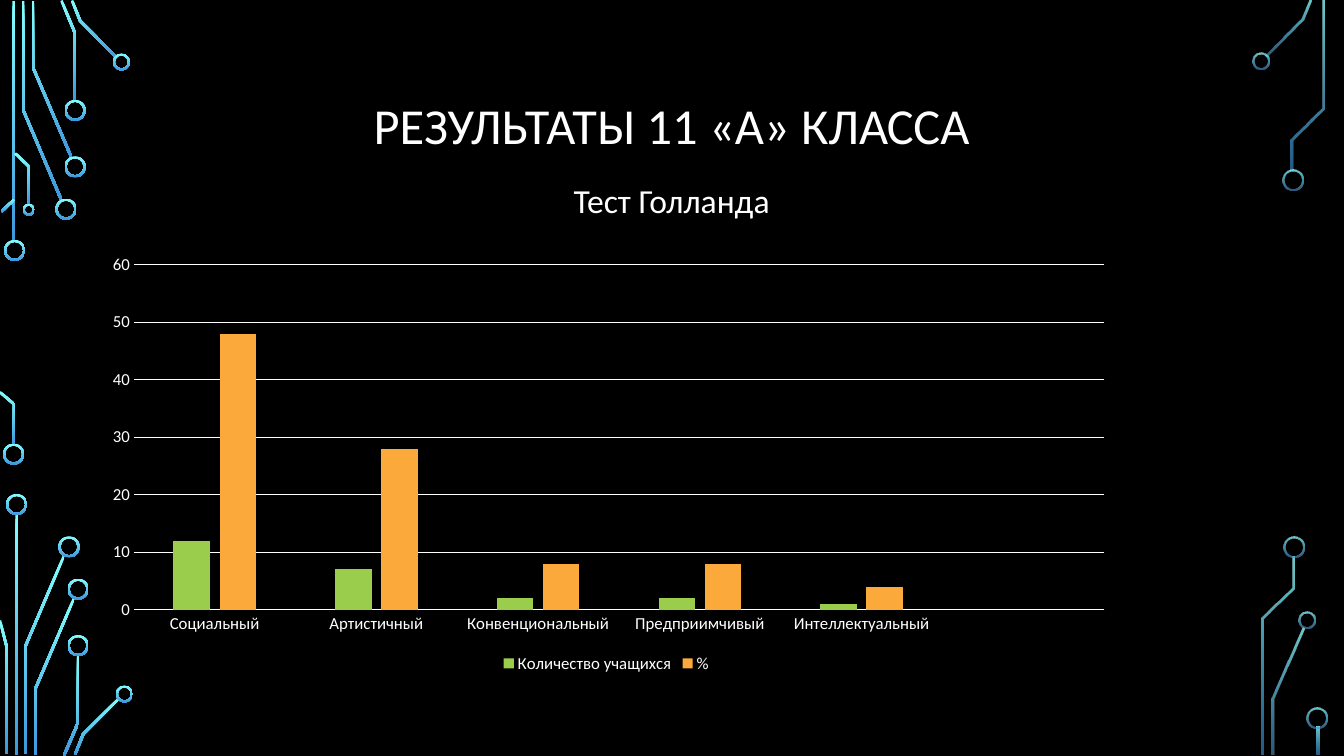
from dataclasses import dataclass
from math import hypot

from pptx import Presentation
from pptx.chart.data import CategoryChartData
from pptx.dml.color import RGBColor
from pptx.enum.chart import XL_CHART_TYPE as ChartType
from pptx.enum.chart import XL_LEGEND_POSITION as LegendPosition
from pptx.enum.chart import XL_TICK_MARK as TickMark
from pptx.enum.shapes import MSO_SHAPE as Preset
from pptx.enum.text import MSO_ANCHOR as Anchor
from pptx.enum.text import PP_ALIGN as Align
from pptx.oxml import parse_xml
from pptx.oxml.ns import nsdecls, qn
from pptx.util import Emu, Pt

PX = 4572  # EMU in one px, 200 px to the inch
SLIDE_WIDTH, SLIDE_HEIGHT = 2667, 1500
TRACE_WIDTH = 5
RING_WIDTH = 4
RING_SIZE = 42


@dataclass(frozen=True)
class Theme:
    font: str = "Calibri"
    background: RGBColor = RGBColor(0x00, 0x00, 0x00)
    text: RGBColor = RGBColor(0xFF, 0xFF, 0xFF)
    glow: tuple = (RGBColor(0x82, 0xFF, 0xFF), RGBColor(0x3D, 0x97, 0xDE))
    series: tuple = (RGBColor(0x9A, 0xCD, 0x4C), RGBColor(0xFA, 0xA9, 0x3A))
    title_size: int = 36
    caption_size: int = 24
    chart_size: int = 12
    rule_width: float = 0.75


THEME = Theme()

# Circuit parts: traces are centre lines, rings are left, top and optional size
LEFT_TRACES = [
    [(27, 2), (27, 480)],
    [(46, 2), (46, 218), (122, 397)],
    [(65, 2), (65, 133), (142, 313)],
    [(122, 1), (149, 66), (149, 200)],
    [(143, 1), (159, 41), (231, 114)],
    [(3, 420), (28, 396)],
    [(0, 778), (28, 802), (28, 882)],
    [(30, 304), (58, 331), (58, 406)],
    [(33, 1020), (33, 1498)],
    [(51, 1496), (51, 1281), (127, 1103)],
    [(13, 1496), (13, 1282), (0, 1231)],
    [(71, 1498), (71, 1365), (147, 1187)],
    [(127, 1499), (155, 1434), (155, 1300)],
    [(149, 1497), (165, 1457), (236, 1386)],
]
LEFT_RINGS = [
    (8, 476), (6, 880), (110, 394), (128, 310), (128, 198), (224, 106, 34),
    (45, 404, 24), (12, 980), (116, 1064), (134, 1148), (134, 1260),
    (230, 1360, 34),
]
RIGHT_TRACES = [
    [(34, 111), (105, 39), (121, 1)],
    [(45, 1498), (45, 1387), (106, 1247)],
    [(145, 2), (145, 215), (84, 277), (84, 338)],
    [(25, 1498), (25, 1227), (87, 1167), (87, 1104)],
    [(135, 1442), (135, 1498)],
]
RIGHT_RINGS = [(6, 104, 34), (64, 336), (96, 1214, 34), (66, 1064), (112, 1404)]

CATEGORIES = ["Социальный", "Артистичный", "Конвенциональный",
              "Предприимчивый", "Интеллектуальный", ""]
SERIES = {
    "Количество учащихся": (12, 7, 2, 2, 1, None),
    "%": (48, 28, 8, 8, 4, None),
}


def to_emu(*lengths):
    return [Emu(round(length * PX)) for length in lengths]


def trace_outline(points, width):
    """Return the closed outline of a mitred band along the points."""
    normals = []
    for (x1, y1), (x2, y2) in zip(points, points[1:]):
        length = hypot(x2 - x1, y2 - y1)
        normals.append(((y1 - y2) / length, (x2 - x1) / length))
    before, after = normals[:1] + normals, normals + normals[-1:]
    near, far = [], []
    for (x, y), (ax, ay), (bx, by) in zip(points, before, after):
        reach = width / 2 / (1 + ax * bx + ay * by)
        dx, dy = (ax + bx) * reach, (ay + by) * reach
        near.append((x + dx, y + dy))
        far.append((x - dx, y - dy))
    return near + far[::-1]


def paint_glow(shape, opacities):
    shape.shadow.inherit = False
    shape.line.fill.background()
    shape.fill.gradient()
    shape.fill.gradient_angle = 270
    for position, (stop, color) in enumerate(
            zip(shape.fill.gradient_stops, THEME.glow)):
        stop.position = position
        stop.color.rgb = color
    for color, opacity in zip(shape._element.iter(qn("a:srgbClr")), opacities):
        if opacity < 100:
            color.append(parse_xml(
                f'<a:alpha {nsdecls("a")} val="{opacity * 1000}"/>'))


def add_circuit(slide, box, traces, rings, opacities):
    left, top, _, _ = box
    for points in traces:
        outline = [to_emu(left + x, top + y)
                   for x, y in trace_outline(points, TRACE_WIDTH)]
        builder = slide.shapes.build_freeform(*outline[0], scale=1.0)
        builder.add_line_segments(outline[1:], close=True)
        paint_glow(builder.convert_to_shape(), opacities)
    for x, y, *custom in rings:
        size = custom[0] if custom else RING_SIZE
        ring = slide.shapes.add_shape(
            Preset.DONUT, *to_emu(left + x, top + y, size, size))
        ring.adjustments[0] = RING_WIDTH / size
        paint_glow(ring, opacities)


def add_heading(slide, box, text, size, line_spacing, anchor):
    text_frame = slide.shapes.add_textbox(*to_emu(*box)).text_frame
    text_frame.word_wrap = True
    text_frame.vertical_anchor = anchor
    text_frame.text = text
    paragraph = text_frame.paragraphs[0]
    paragraph.alignment = Align.CENTER
    paragraph.line_spacing = line_spacing
    style_font(paragraph.runs[0].font, size)


def style_font(font, size):
    font.name = THEME.font
    font.size = Pt(size)
    font.color.rgb = THEME.text


def style_rule(line):
    line.color.rgb = THEME.text
    line.width = Pt(THEME.rule_width)


def add_results_chart(slide, box):
    data = CategoryChartData()
    data.categories = CATEGORIES
    for name, values in SERIES.items():
        data.add_series(name, values)
    chart = slide.shapes.add_chart(
        ChartType.COLUMN_CLUSTERED, *to_emu(*box), data).chart
    chart.has_title = False
    style_font(chart.font, THEME.chart_size)

    # Columns
    plot = chart.plots[0]
    plot.vary_by_categories = False
    plot.gap_width, plot.overlap = 219, -27
    for series, color in zip(plot.series, THEME.series):
        series.format.fill.solid()
        series.format.fill.fore_color.rgb = color

    # Axes
    for axis in (chart.category_axis, chart.value_axis):
        axis.major_tick_mark = axis.minor_tick_mark = TickMark.NONE
        style_font(axis.tick_labels.font, THEME.chart_size)
    style_rule(chart.category_axis.format.line)
    value_axis = chart.value_axis
    value_axis.minimum_scale, value_axis.maximum_scale = 0, 60
    value_axis.major_unit = 10
    value_axis.format.line.fill.background()
    style_rule(value_axis.major_gridlines.format.line)

    # Legend
    chart.has_legend = True
    chart.legend.position = LegendPosition.BOTTOM
    chart.legend.include_in_layout = False
    style_font(chart.legend.font, THEME.chart_size)

    # Inner plot area
    plot_area = chart._chartSpace.chart.plotArea
    for layout in plot_area.findall(qn("c:layout")):
        plot_area.remove(layout)
    plot_area.insert(0, parse_xml(
        f'<c:layout {nsdecls("c")}><c:manualLayout>'
        '<c:layoutTarget val="inner"/>'
        '<c:xMode val="edge"/><c:yMode val="edge"/>'
        '<c:x val="0.04"/><c:y val="0.025"/>'
        '<c:w val="0.945"/><c:h val="0.815"/>'
        '</c:manualLayout></c:layout>'))


def build_results_slide(presentation):
    slide = presentation.slides.add_slide(presentation.slide_layouts[6])
    slide.background.fill.solid()
    slide.background.fill.fore_color.rgb = THEME.background
    add_circuit(slide, (0, 0, 266, SLIDE_HEIGHT),
                LEFT_TRACES, LEFT_RINGS, (100, 100))
    add_circuit(slide, (2480, 0, 187, SLIDE_HEIGHT),
                RIGHT_TRACES, RIGHT_RINGS, (80, 60))
    add_heading(slide, (250, 136, 2166, 238), "РЕЗУЛЬТАТЫ 11 «А» КЛАССА",
                THEME.title_size, 0.9, Anchor.MIDDLE)
    add_heading(slide, (250, 332, 2166, 934), "Тест Голланда",
                THEME.caption_size, 1.2, Anchor.TOP)
    add_results_chart(slide, (184, 504, 2038, 840))


def main():
    presentation = Presentation()
    presentation.slide_width, presentation.slide_height = to_emu(
        SLIDE_WIDTH, SLIDE_HEIGHT)
    build_results_slide(presentation)
    presentation.save("out.pptx")


if __name__ == "__main__":
    main()
